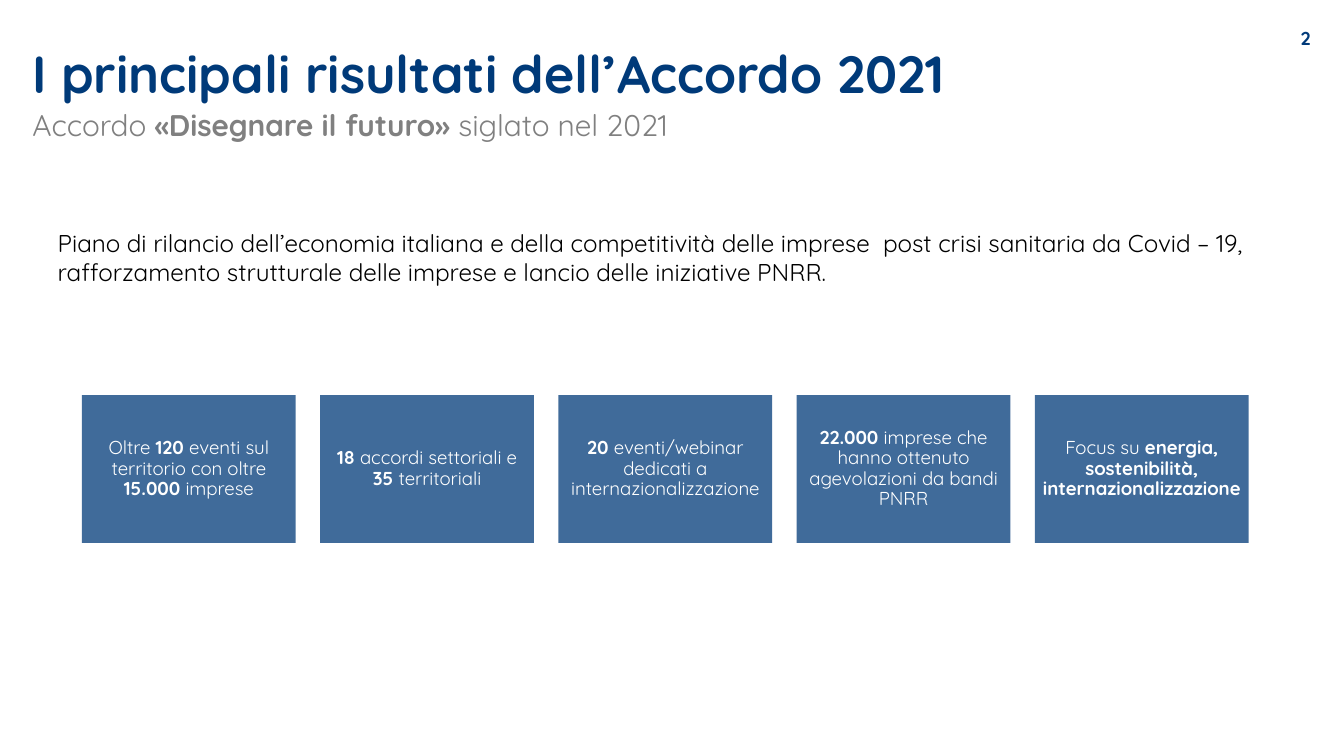
from lxml import etree
from pptx import Presentation
from pptx.dml.color import RGBColor
from pptx.enum import shapes, text
from pptx.oxml import ns
from pptx.util import Inches, Pt

NAVY = RGBColor(0x00, 0x3A, 0x79)
GREY = RGBColor(0x80, 0x80, 0x80)
BLACK = RGBColor(0x00, 0x00, 0x00)
WHITE = RGBColor(0xFF, 0xFF, 0xFF)
FONT = "Quicksand"

PAGE_NUMBER = [("2", True)]
TITLE = [("I principali risultati dell’Accordo 2021", True)]
SUBTITLE = [("Accordo ", False), ("«Disegnare il futuro»", True), (" siglato nel 2021", False)]
INTRO = [(
    "Piano di rilancio dell’economia italiana e della competitività delle imprese  post crisi "
    "sanitaria da Covid – 19, rafforzamento strutturale delle imprese e lancio delle iniziative PNRR.",
    False,
)]
RESULTS = [
    [("Oltre", False), (" 120 ", True), ("eventi sul territorio con oltre ", False),
     ("15.000 ", True), ("imprese", False)],
    [("18 ", True), ("accordi settoriali e", False), (" 35 ", True), ("territoriali", False)],
    [("20 ", True), ("eventi/webinar dedicati a internazionalizzazione", False)],
    [("22.000 ", True), ("imprese che hanno ottenuto agevolazioni da bandi PNRR", False)],
    [("Focus su", False), (" energia, sostenibilità, internazionalizzazione", True)],
]

FIRST_LEFT, LAST_LEFT, CARD_TOP = 0.61, 7.7, 2.94
CARD_WIDTH, CARD_HEIGHT = 1.59, 1.1
CARD_STEP = (LAST_LEFT - FIRST_LEFT) / (len(RESULTS) - 1)


def place(box, left, top, width, height):
    box.left, box.top = Inches(left), Inches(top)
    box.width, box.height = Inches(width), Inches(height)


def write(box, spans, size, color, align=text.PP_ALIGN.LEFT, anchor=text.MSO_ANCHOR.TOP, inset=0):
    frame = box.text_frame
    frame.word_wrap = True
    frame.auto_size = text.MSO_AUTO_SIZE.NONE
    frame.vertical_anchor = anchor
    frame.margin_left = frame.margin_right = Inches(inset)
    frame.margin_top = frame.margin_bottom = Inches(inset)
    para = frame.paragraphs[0]
    para.alignment = align
    para.space_before = Pt(0)
    for words, bold in spans:
        span = para.add_run()
        span.text = words
        span.font.name = FONT
        span.font.size = Pt(size)
        span.font.bold = bold
        span.font.color.rgb = color
    return para


deck = Presentation()
deck.slide_width = Inches(10)
deck.slide_height = Inches(10 * 9 / 16)
page = deck.slides.add_slide(deck.slide_layouts[1])

title = page.shapes.title
place(title, 0.24, 0.31, 9.53, 0.89)
write(title, TITLE, 28, NAVY)

subtitle = page.placeholders[1]
place(subtitle, 0.24, 0.79, 9.54, 0.61)
para = write(subtitle, SUBTITLE, 16, GREY)
properties = para._p.get_or_add_pPr()
properties.set("marL", "0")
properties.set("indent", "0")
etree.SubElement(properties, ns.qn("a:buNone"))

number = page.shapes.add_textbox(Inches(9.39), Inches(0.15), Inches(0.46), Inches(0.3))
write(number, PAGE_NUMBER, 10, NAVY, text.PP_ALIGN.RIGHT, inset=0.05)
number.text_frame.margin_right = Inches(0.1)

intro = page.shapes.add_textbox(Inches(0.43), Inches(1.7), Inches(8.86), Inches(0.44))
write(intro, INTRO, 13, BLACK)

for index, spans in enumerate(RESULTS):
    card = page.shapes.add_shape(
        shapes.MSO_SHAPE.RECTANGLE, Inches(FIRST_LEFT + index * CARD_STEP), Inches(CARD_TOP),
        Inches(CARD_WIDTH), Inches(CARD_HEIGHT),
    )
    card.shadow.inherit = False
    card.line.fill.background()
    card.fill.solid()
    card.fill.fore_color.rgb = NAVY
    color = card.fill._xPr.find(".//" + ns.qn("a:srgbClr"))
    etree.SubElement(color, ns.qn("a:alpha"), val="75000")
    para = write(card, spans, 10, WHITE, text.PP_ALIGN.CENTER, text.MSO_ANCHOR.MIDDLE, 0.04)
    para.line_spacing = 0.9

deck.save("out.pptx")
